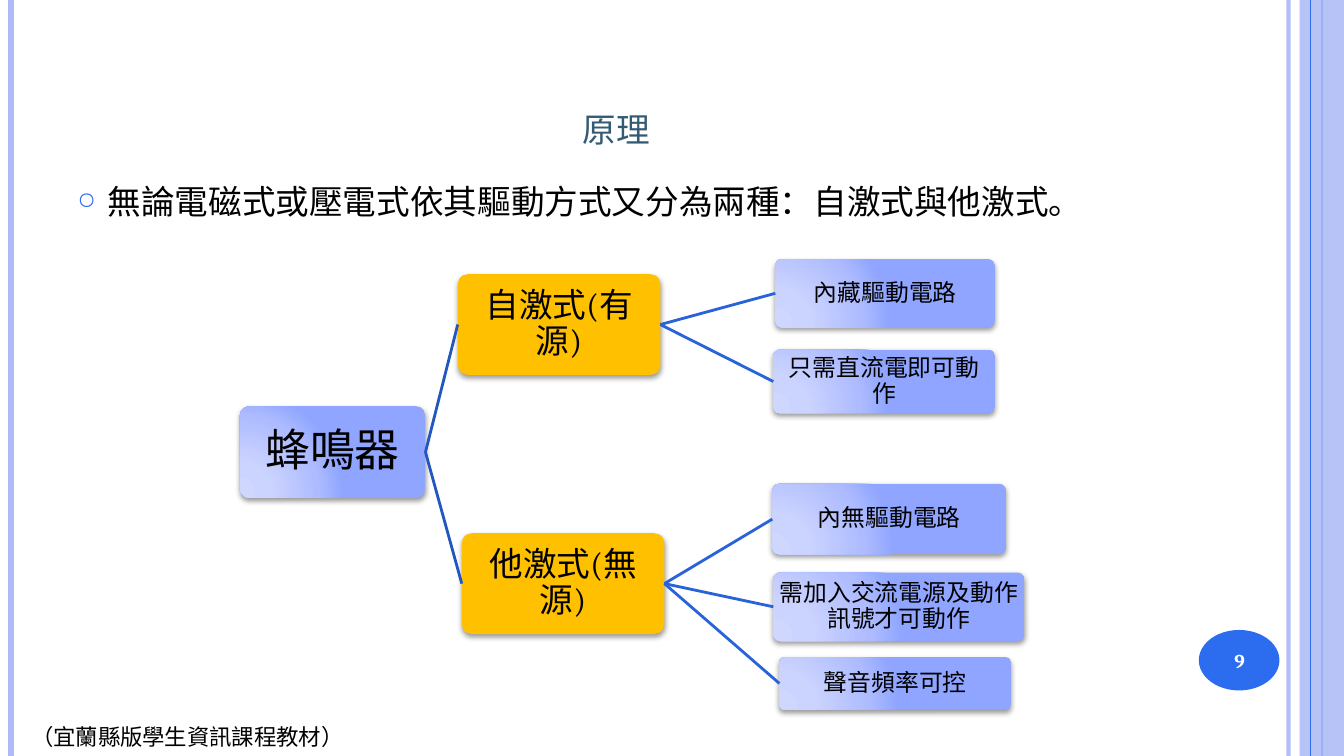
from dataclasses import dataclass

from lxml.etree import SubElement
from pptx import Presentation
from pptx.dml.color import RGBColor
from pptx.enum.shapes import MSO_CONNECTOR, MSO_SHAPE
from pptx.enum.text import MSO_ANCHOR, PP_ALIGN
from pptx.oxml import parse_xml
from pptx.oxml.ns import nsdecls, qn
from pptx.util import Inches, Pt


@dataclass(frozen=True)
class Theme:
    font: str = "Cambria"
    text: str = "000000"
    title: str = "335B74"
    white: str = "FFFFFF"
    accent: str = "2C6DF0"
    band: str = "ADBAF6"
    branch: str = "FFC000"
    trunk_edge: str = "2357C0"
    leaf_edge: str = "2863DA"
    gradient: tuple = ((0, "CFD7FF"), (30, "CBD3FF"), (75, "AEBCFF"), (100, "8FA5FF"))
    root_size: int = 32
    title_size: int = 30
    body_size: int = 24
    leaf_size: int = 17
    footer_size: int = 16
    number_size: int = 14


class SlideBuilder:
    def __init__(self, page, theme):
        self.page = page
        self.theme = theme

    def set_alpha(self, element, percent):
        color = element.find(".//" + qn("a:srgbClr"))
        SubElement(color, qn("a:alpha")).set("val", str(percent * 1000))

    def line(self, start, end, color, width, alpha=100):
        points = [Inches(value) for value in (*start, *end)]
        connector = self.page.shapes.add_connector(MSO_CONNECTOR.STRAIGHT, *points)
        connector.line.color.rgb = RGBColor.from_string(color)
        connector.line.width = Pt(width)
        properties = connector._element.spPr
        if alpha < 100:
            self.set_alpha(properties, alpha)
        SubElement(properties, qn("a:effectLst"))
        return connector

    def shape(self, kind, place, color=None, alpha=100):
        shape = self.page.shapes.add_shape(kind, *map(Inches, place))
        if color:
            shape.fill.solid()
            shape.fill.fore_color.rgb = RGBColor.from_string(color)
        if alpha < 100:
            self.set_alpha(shape._element.spPr, alpha)
        shape.line.fill.background()
        shape.shadow.inherit = False
        return shape

    def set_text(self, box, text, size, color, align=PP_ALIGN.CENTER, anchor=MSO_ANCHOR.MIDDLE):
        frame = box.text_frame
        frame.text = text
        frame.word_wrap = True
        frame.vertical_anchor = anchor
        para = frame.paragraphs[0]
        para.alignment = align
        span = para.runs[0]
        span.font.name = self.theme.font
        span.font.size = Pt(size)
        span.font.color.rgb = RGBColor.from_string(color)
        return para

    def text(self, place, *style, **layout):
        box = self.page.shapes.add_textbox(*map(Inches, place))
        self.set_text(box, *style, **layout)
        return box

    def bullet(self, para):
        properties = para._p.get_or_add_pPr()
        properties.set("marL", str(Inches(0.3)))
        properties.set("indent", str(-Inches(0.3)))
        color = SubElement(properties, qn("a:buClr"))
        SubElement(color, qn("a:srgbClr")).set("val", self.theme.accent)
        SubElement(properties, qn("a:buSzPct")).set("val", "70000")
        SubElement(properties, qn("a:buChar")).set("char", "○")

    def add_gradient(self, shape):
        stops = "".join(
            f'<a:gs pos="{position * 1000}"><a:srgbClr val="{color}"/></a:gs>'
            for position, color in self.theme.gradient
        )
        gradient = parse_xml(
            f'<a:gradFill {nsdecls("a")} rotWithShape="1"><a:gsLst>{stops}</a:gsLst>'
            '<a:path path="circle"><a:fillToRect l="5000" t="100000" r="120000" b="10000"/>'
            "</a:path></a:gradFill>"
        )
        shape._element.spPr.find(qn("a:prstGeom")).addnext(gradient)

    def add_shadow(self, shape):
        effects = shape._element.spPr.find(qn("a:effectLst"))
        effects.append(parse_xml(
            f'<a:outerShdw {nsdecls("a")} blurRad="{Pt(4)}" dist="{Pt(2)}" dir="5400000" '
            'rotWithShape="0"><a:srgbClr val="000000"><a:alpha val="40000"/></a:srgbClr>'
            "</a:outerShdw>"
        ))

    def node(self, text, place, size, inset, color=None):
        shape = self.shape(MSO_SHAPE.ROUNDED_RECTANGLE, place, color)
        shape.adjustments[0] = 0.1
        if color is None:
            self.add_gradient(shape)
        self.add_shadow(shape)
        para = self.set_text(shape, text, size, self.theme.text)
        para.line_spacing = 0.9
        frame = shape.text_frame
        frame.margin_left = frame.margin_right = Inches(inset)
        frame.margin_top = frame.margin_bottom = Inches(inset)
        return shape

    def edge(self, parent, child, color):
        connector = self.line((0, 0), (1, 1), color, 2)
        connector.begin_connect(parent, 3)
        connector.end_connect(child, 1)


BRANCHES = (
    ("自激式(有源)", (4.54, 2.72, 2.01, 1), (
        ("內藏驅動電路", (7.69, 2.57, 2.18, 0.68)),
        ("只需直流電即可動作", (7.67, 3.47, 2.2, 0.63)),
    )),
    ("他激式(無源)", (4.58, 5.29, 2.01, 1), (
        ("內無驅動電路", (7.66, 4.8, 2.32, 0.7)),
        ("需加入交流電源及動作訊號才可動作", (7.67, 5.68, 2.49, 0.68)),
        ("聲音頻率可控", (7.73, 6.52, 2.3, 0.52)),
    )),
)


def draw_frame(builder):
    theme = builder.theme

    def rule(x, color, width, alpha=100):
        builder.line((x, 0), (x, 7.5), color, width, alpha)

    rule(12.78, theme.band, 3, 93)
    rule(0.11, theme.band, 4.5)
    rule(13.11, theme.accent, 1.5)
    builder.shape(MSO_SHAPE.RECTANGLE, (12.89, 0, 0.44, 7.5), theme.band, 87)
    rule(13, theme.accent, 0.75)
    builder.shape(MSO_SHAPE.OVAL, (11.89, 6.25, 0.8, 0.6), theme.accent)
    number = builder.text((11.85, 6.27, 0.89, 0.57), "9", theme.number_size, theme.white)
    number.text_frame.paragraphs[0].runs[0].font.bold = True
    footer = builder.text((0.21, 7.12, 3.34, 0.37), "（宜蘭縣版學生資訊課程教材）",
                          theme.footer_size, theme.text,
                          align=PP_ALIGN.LEFT, anchor=MSO_ANCHOR.TOP)
    footer.text_frame.word_wrap = False


def draw_heading(builder):
    theme = builder.theme
    title = builder.text((0.67, 0.79, 10.89, 0.76), "原理", theme.title_size, theme.title,
                         anchor=MSO_ANCHOR.BOTTOM)
    title.text_frame.paragraphs[0].runs[0].font._element.set("cap", "small")
    body = builder.text((0.67, 1.75, 10.89, 0.6),
                        "無論電磁式或壓電式依其驅動方式又分為兩種：自激式與他激式。",
                        theme.body_size, theme.text,
                        align=PP_ALIGN.LEFT, anchor=MSO_ANCHOR.TOP)
    builder.bullet(body.text_frame.paragraphs[0])


def draw_tree(builder):
    theme = builder.theme
    root = builder.node("蜂鳴器", (2.38, 4.03, 1.84, 0.91), theme.root_size, 0.05)
    for name, place, leaves in BRANCHES:
        branch = builder.node(name, place, theme.body_size, 0.05, theme.branch)
        builder.edge(root, branch, theme.trunk_edge)
        for label, spot in leaves:
            leaf = builder.node(label, spot, theme.leaf_size, 0.03)
            builder.edge(branch, leaf, theme.leaf_edge)


def main():
    deck = Presentation()
    deck.slide_width = Inches(13.33)
    deck.slide_height = Inches(7.5)
    page = deck.slides.add_slide(deck.slide_layouts[6])
    builder = SlideBuilder(page, Theme())
    draw_frame(builder)
    draw_heading(builder)
    draw_tree(builder)
    deck.save("out.pptx")


if __name__ == "__main__":
    main()
